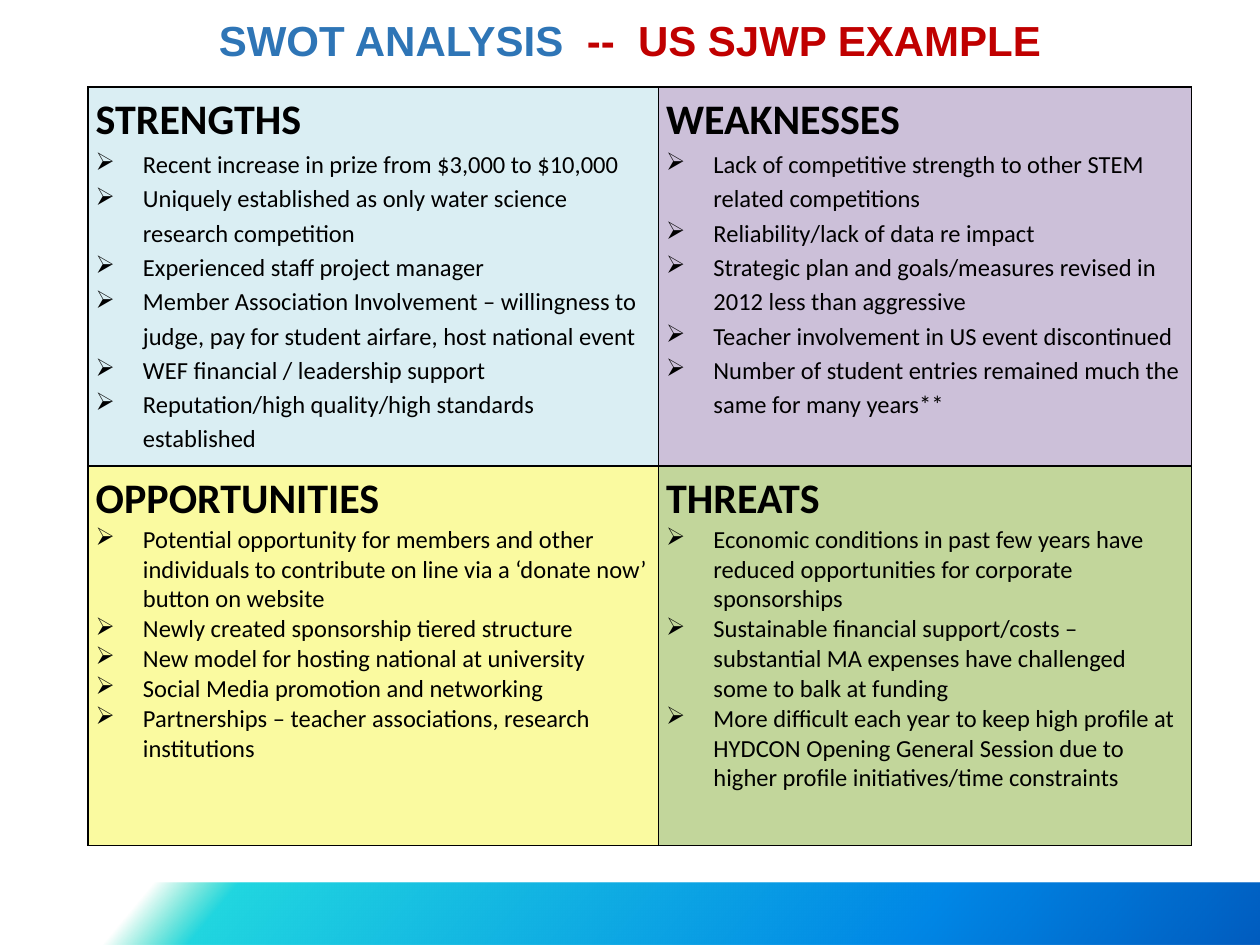
from lxml import etree
from pptx import Presentation
from pptx.dml.color import RGBColor
from pptx.enum.shapes import MSO_SHAPE
from pptx.enum.text import PP_ALIGN
from pptx.oxml.ns import qn
from pptx.util import Pt

RECT = MSO_SHAPE.RECTANGLE
CENTER = PP_ALIGN.CENTER

COLORS = {
    "black": "000000", "blue": "2E75B6", "red": "C00000",
    "ice": "DAEEF3", "lilac": "CCC0D9", "lemon": "FAFAA0", "sage": "C2D69B",
    "mint": "03D4A8", "aqua": "21D6E0", "azure": "0087E6", "navy": "005CBF",
}

# Heading, fill, line spacing of the bullets, bullets
CELLS = [
    ("STRENGTHS", "ice", 1.15, [
        "Recent increase in prize from $3,000 to $10,000",
        "Uniquely established as only water science research competition",
        "Experienced staff project manager",
        "Member Association Involvement – willingness to judge, "
        "pay for student airfare, host national event",
        "WEF financial / leadership support",
        "Reputation/high quality/high standards established",
    ]),
    ("WEAKNESSES", "lilac", 1.15, [
        "Lack of competitive strength to other STEM related competitions",
        "Reliability/lack of data re impact",
        "Strategic plan and goals/measures revised in 2012 less than aggressive",
        "Teacher involvement in US event discontinued",
        "Number of student entries remained much the same for many years**",
    ]),
    ("OPPORTUNITIES", "lemon", 1.0, [
        "Potential opportunity for members and other individuals "
        "to contribute on line via a ‘donate now’ button on website",
        "Newly created sponsorship tiered structure",
        "New model for hosting national at university",
        "Social Media promotion and networking",
        "Partnerships – teacher associations, research institutions",
    ]),
    ("THREATS", "sage", 1.0, [
        "Economic conditions in past few years have reduced "
        "opportunities for corporate sponsorships",
        "Sustainable financial support/costs – substantial MA expenses "
        "have challenged some to balk at funding",
        "More difficult each year to keep high profile at HYDCON Opening "
        "General Session due to higher profile initiatives/time constraints",
    ]),
]


def add_run(para, text, size, bold, color="black", face="Calibri"):
    run = para.add_run()
    run.text = text
    font = run.font
    font.name, font.size, font.bold = face, Pt(size), bold
    font.color.rgb = RGBColor.from_string(COLORS[color])


def add_color(node, color):
    return etree.SubElement(node, qn("a:srgbClr"), val=COLORS[color])


prs = Presentation()
prs.slide_width, prs.slide_height = Pt(720), Pt(540)
slide = prs.slides.add_slide(prs.slide_layouts[6])
shapes = slide.shapes

# Gradient band at the foot, fading in from clear
band = shapes.add_shape(RECT, Pt(-67), Pt(504.5), Pt(787), Pt(35.5))
band.shadow.inherit = False
band.line.fill.background()
band.fill.gradient()
band.fill.gradient_angle = 320
stops = band.fill.gradient_stops
stop_list = next(band.element.iter(qn("a:gsLst")))
for stop in list(stop_list):
    stop_list.remove(stop)
for pos, color in [(19, "mint"), (25, "aqua"), (75, "azure"), (100, "navy")]:
    stop = etree.SubElement(stop_list, qn("a:gs"), pos=str(pos * 1000))
    clr = add_color(stop, color)
    if color == "mint":
        etree.SubElement(clr, qn("a:alpha"), val="0")

# SWOT table
widths, height = (326, 304.7), 216.7
frame = shapes.add_table(2, 2, Pt(50.2), Pt(49.7), Pt(sum(widths)), Pt(2 * height))
table = frame.table
for col, width in zip(table.columns, widths):
    col.width = Pt(width)
for row in table.rows:
    row.height = Pt(height)

for cell, (head, color, space, points) in zip(table.iter_cells(), CELLS):
    cell.margin_left = cell.margin_right = Pt(4.5)
    cell.margin_top = cell.margin_bottom = 0
    props = cell._tc.get_or_add_tcPr()
    for side in ("lnL", "lnR", "lnT", "lnB"):
        line = etree.SubElement(props, qn("a:" + side), w=str(Pt(1)))
        add_color(etree.SubElement(line, qn("a:solidFill")), "black")
    cell.fill.solid()
    cell.fill.fore_color.rgb = RGBColor.from_string(COLORS[color])

    text = cell.text_frame
    para = text.paragraphs[0]
    para.line_spacing = 1.15
    add_run(para, head, 24, True)
    for point in points:
        para = text.add_paragraph()
        para.line_spacing = space
        props = para._p.get_or_add_pPr()
        props.set("marL", str(Pt(27)))
        props.set("indent", str(Pt(-27)))
        etree.SubElement(props, qn("a:buChar"), char="➢")
        add_run(para, point, 14, False)

# Title
box = shapes.add_textbox(0, Pt(5), Pt(720), Pt(36))
box.text_frame.word_wrap = True
para = box.text_frame.paragraphs[0]
para.alignment = CENTER
add_run(para, "SWOT ANALYSIS ", 24, True, "blue", "Arial")
add_run(para, " --  US SJWP EXAMPLE", 24, True, "red", "Arial")

prs.save("out.pptx")
